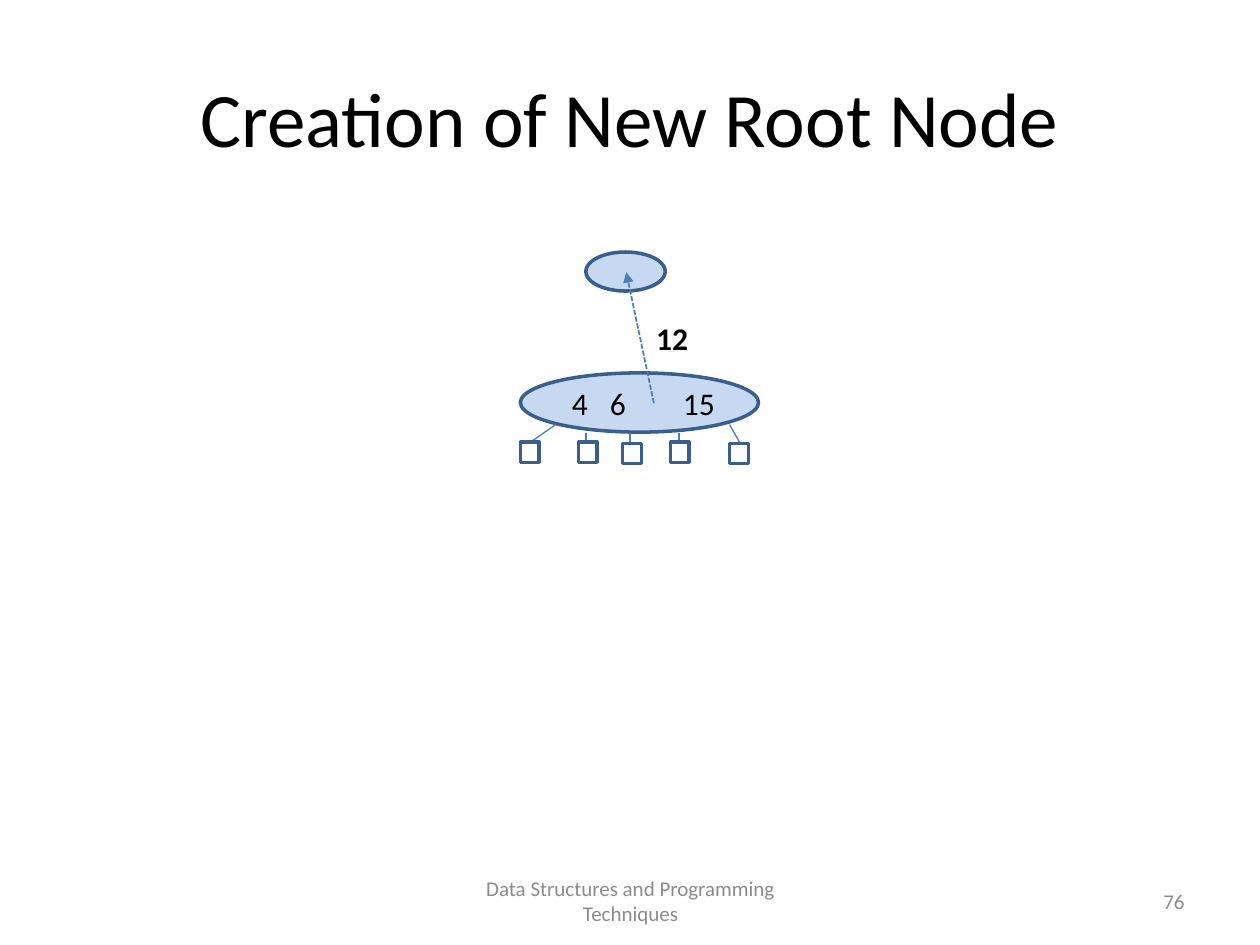
import pptx
import pptx.dml.color
import pptx.enum.dml
import pptx.enum.shapes
import pptx.enum.text
import pptx.oxml.ns
import pptx.util
from lxml import etree

RGBColor = pptx.dml.color.RGBColor
Align = pptx.enum.text.PP_ALIGN
Anchor = pptx.enum.text.MSO_ANCHOR
Shape = pptx.enum.shapes.MSO_SHAPE

BLACK = RGBColor(0x00, 0x00, 0x00)
GREY = RGBColor(0x8C, 0x8C, 0x8C)
NODE_FILL = RGBColor(0xC6, 0xD9, 0xF1)
NODE_LINE = RGBColor(0x3A, 0x5F, 0x8C)
LINK = RGBColor(0x4B, 0x7E, 0xBC)

FONT = "Calibri"
COLUMNS, ROWS = 100, 75
CELL = pptx.util.Inches(0.1)

# Leaves of the full node: left column, top row, link start and link end.
LEAVES = [
    (0, 15.1, (2.8, 13.7), (0.8, 15.1)),
    (4.6, 15.1, (5.2, 14.4), (5.2, 15.1)),
    (8.1, 15.2, (8.7, 14.4), (8.7, 15.1)),
    (11.9, 15.1, (12.6, 14.4), (12.6, 15.1)),
    (16.6, 15.2, (16.6, 13.7), (17.4, 15.1)),
]


def cells(*counts):
    """Turn counts of grid cells into lengths."""
    return [round(count * CELL) for count in counts]


def add_label(slide, box, text, size, color=BLACK, align=Align.LEFT,
              anchor=Anchor.TOP, bold=False):
    label = slide.shapes.add_textbox(*cells(*box))
    frame = label.text_frame
    frame.word_wrap = True
    frame.vertical_anchor = anchor
    paragraph = frame.paragraphs[0]
    paragraph.alignment = align
    run = paragraph.add_run()
    run.text = text
    run.font.name = FONT
    run.font.size = pptx.util.Pt(size)
    run.font.bold = bold
    run.font.color.rgb = color
    return label


def add_node(slide, kind, box, fill=None):
    node = slide.shapes.add_shape(kind, *cells(*box))
    node.shadow.inherit = False
    if fill is None:
        node.fill.background()
    else:
        node.fill.solid()
        node.fill.fore_color.rgb = fill
    node.line.color.rgb = NODE_LINE
    node.line.width = pptx.util.Pt(2)


def add_link(slide, start, end, width=0.75):
    link = slide.shapes.add_connector(
        pptx.enum.shapes.MSO_CONNECTOR.STRAIGHT, *cells(*start, *end))
    link.line.color.rgb = LINK
    link.line.width = pptx.util.Pt(width)
    etree.SubElement(link._element.spPr, pptx.oxml.ns.qn("a:effectLst"))
    return link


def add_keys(slide, box, keys, stops):
    """Put the keys of a node in one line, each after the first at its tab stop."""
    label = add_label(slide, box, "\t".join(keys), 18)
    label.text_frame.margin_left = cells(2.6)[0]
    properties = label.text_frame.paragraphs[0]._p.get_or_add_pPr()
    tabs = etree.SubElement(properties, pptx.oxml.ns.qn("a:tabLst"))
    for position in cells(*stops):
        etree.SubElement(tabs, pptx.oxml.ns.qn("a:tab"),
                         pos=str(position), algn="l")


def add_title(slide, box):
    add_label(slide, box, "Creation of New Root Node", 44,
              align=Align.CENTER, anchor=Anchor.MIDDLE)


def add_tree(slide, box):
    left, top, width, _ = box

    def place(column, row, *size):
        return (left + column, top + row, *size)

    add_node(slide, Shape.OVAL, place(0, 9.6, width, 4.7), NODE_FILL)
    for column, row, start, end in LEAVES:
        add_link(slide, place(*start), place(*end))
        add_node(slide, Shape.RECTANGLE, place(column, row, 1.5, 1.6))
    add_keys(slide, place(1.5, 10, 16.4, 4), ["4", "6", "15"], [3, 8.8])

    add_node(slide, Shape.OVAL, place(5.2, 0, 6.3, 3.1), NODE_FILL)
    promotion = add_link(slide, place(10.6, 12), place(8.4, 1.6), width=1)
    promotion.line.dash_style = pptx.enum.dml.MSO_LINE.SQUARE_DOT
    etree.SubElement(promotion.line._get_or_add_ln(),
                     pptx.oxml.ns.qn("a:tailEnd"), type="triangle")
    add_label(slide, place(9.8, 4.8, 5.3, 4), "12", 18, bold=True)


def add_footer(slide, box):
    left, top, width, height = box
    number_width = 23.3
    add_label(slide, (left, top, 31.7, height),
              "Data Structures and Programming Techniques", 12, GREY,
              Align.CENTER, Anchor.MIDDLE)
    add_label(slide, (left + width - number_width, top, number_width, height),
              "76", 12, GREY, Align.RIGHT, Anchor.MIDDLE)


def main():
    deck = pptx.Presentation()
    deck.slide_width, deck.slide_height = cells(COLUMNS, ROWS)
    slide = deck.slides.add_slide(deck.slide_layouts[6])
    add_title(slide, (5, 3, 90, 12.5))
    add_tree(slide, (41.3, 20, 18.9, 16.8))
    add_footer(slide, (34.2, 69.5, 60.8, 4))
    deck.save("out.pptx")


if __name__ == "__main__":
    main()
